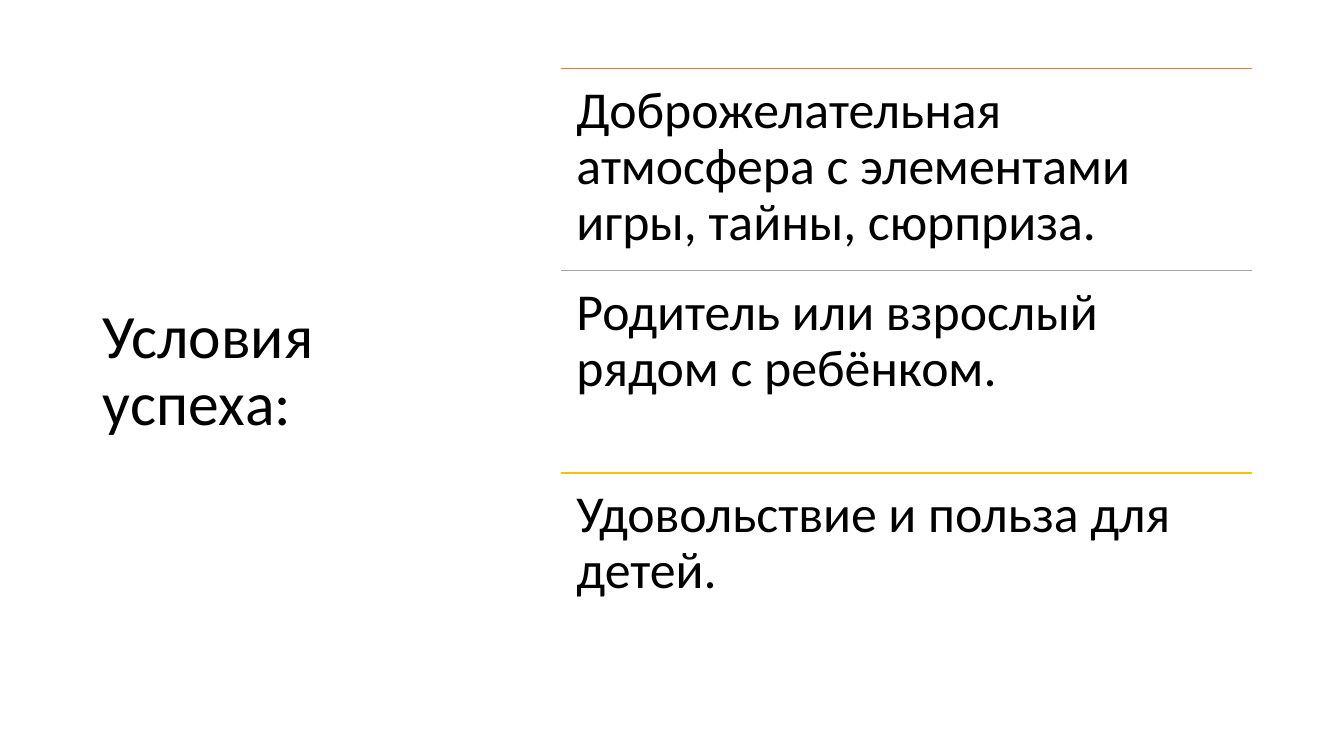
from lxml.etree import SubElement
from pptx import Presentation
from pptx.dml.color import RGBColor
from pptx.enum.shapes import MSO_CONNECTOR
from pptx.enum.text import MSO_ANCHOR as Anchor, MSO_AUTO_SIZE as AutoSize, PP_ALIGN as Align
from pptx.oxml.ns import qn
from pptx.util import Pt

COLORS = {"text": "000000", "orange": "ED7D31", "gray": "A5A5A5", "gold": "FFC000"}
TOP, HEIGHT = 49, 433.2
CONDITIONS_LEFT, CONDITIONS_WIDTH = 401, 493.2

CONDITIONS = [
    ("Доброжелательная атмосфера с элементами игры, тайны, сюрприза.", "orange"),
    ("Родитель или взрослый рядом с ребёнком.", "gray"),
    ("Удовольствие и польза для детей.", "gold"),
]


def write(shape, text, size, anchor, inset_x, inset_y):
    frame = shape.text_frame
    frame.word_wrap = True
    frame.auto_size = AutoSize.NONE
    frame.vertical_anchor = anchor
    frame.margin_left = frame.margin_right = Pt(inset_x)
    frame.margin_top = frame.margin_bottom = Pt(inset_y)
    paragraph = frame.paragraphs[0]
    paragraph.alignment = Align.LEFT
    paragraph.line_spacing = 0.9
    run = paragraph.add_run()
    run.text = text
    run.font.name = "Calibri"
    run.font.size = Pt(size)
    run.font.color.rgb = RGBColor.from_string(COLORS["text"])


deck = Presentation()
deck.slide_width, deck.slide_height = Pt(960), Pt(540)
slide = deck.slides.add_slide(deck.slide_layouts[5])

heading = slide.shapes.title
heading.left, heading.top = Pt(66), Pt(TOP)
heading.width, heading.height = Pt(265.7), Pt(HEIGHT)
write(heading, "Условия успеха:", size=44, anchor=Anchor.MIDDLE, inset_x=7.2, inset_y=3.6)

row_height = HEIGHT / len(CONDITIONS)
for row, (condition, color) in enumerate(CONDITIONS):
    top = TOP + row * row_height
    rule = slide.shapes.add_connector(
        MSO_CONNECTOR.STRAIGHT,
        Pt(CONDITIONS_LEFT), Pt(top), Pt(CONDITIONS_LEFT + CONDITIONS_WIDTH), Pt(top),
    )
    rule.line.color.rgb = RGBColor.from_string(COLORS[color])
    rule.line.width = Pt(1)
    SubElement(rule._element.spPr, qn("a:effectLst"))

    entry = slide.shapes.add_textbox(
        Pt(CONDITIONS_LEFT), Pt(top), Pt(CONDITIONS_WIDTH), Pt(row_height)
    )
    write(entry, condition, size=37, anchor=Anchor.TOP, inset_x=10.8, inset_y=10.8)

deck.save("out.pptx")
